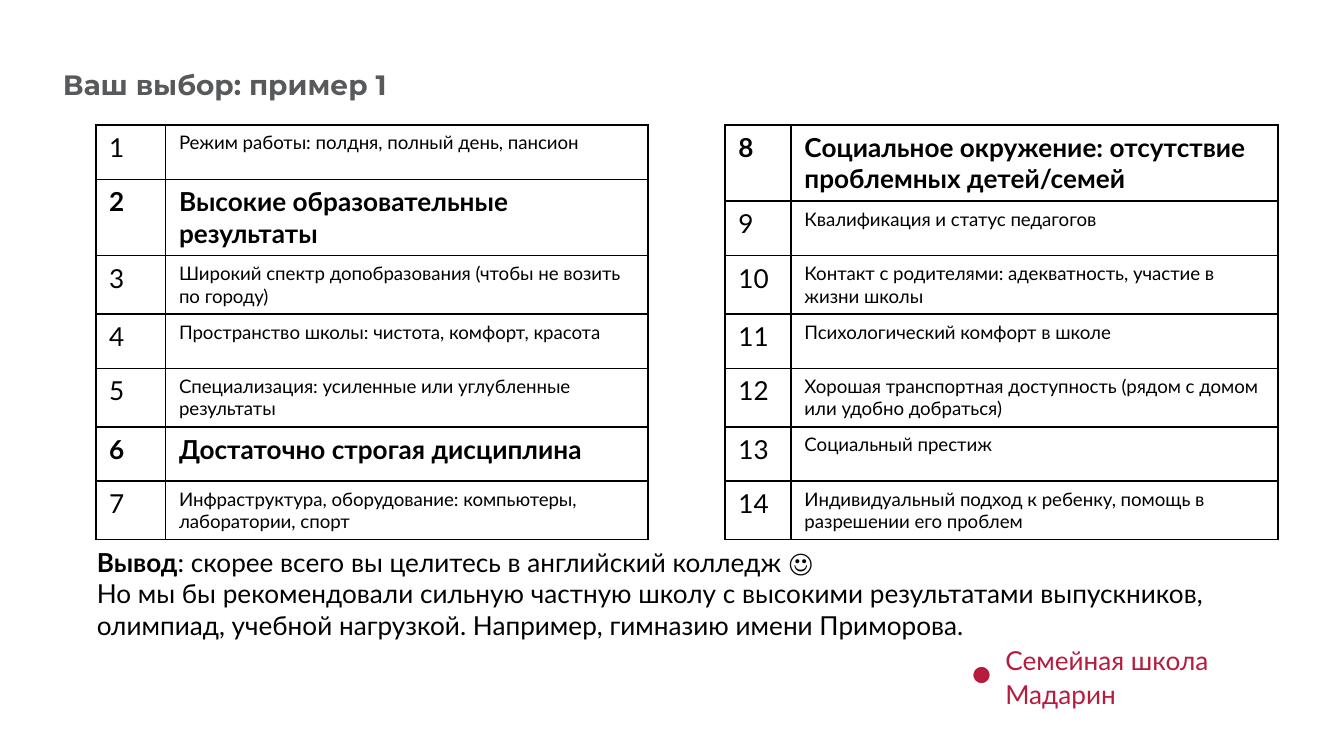
"""Build a slide ranking school choice criteria in two tables."""
from dataclasses import dataclass

from lxml import etree
from pptx import Presentation
from pptx import util as u
from pptx.dml import color
from pptx.enum import shapes, text
from pptx.oxml import ns


@dataclass(frozen=True)
class Theme:
    """Colours, fonts and type sizes of the slide."""

    title: dict
    body: dict
    strong: dict
    detail: dict
    footer: dict
    accent: str = "B61C3D"
    paper: str = "FFFFFF"
    ink: str = "000000"


BODY = {"name": "Lato", "size": u.Pt(14), "bold": False, "color": "000000"}
THEME = Theme(
    title={"name": "Montserrat", "size": u.Pt(15), "bold": True, "color": "58595B"},
    body=BODY,
    strong={**BODY, "bold": True},
    detail={**BODY, "size": u.Pt(10)},
    footer={**BODY, "color": "B61C3D"},
)
PRIORITIES = {2, 6, 8}
ROW_HEIGHT = u.Cm(1.03)
CRITERIA = [
    "Режим работы: полдня, полный день, пансион",
    "Высокие образовательные результаты",
    "Широкий спектр допобразования (чтобы не возить по городу)",
    "Пространство школы: чистота, комфорт, красота",
    "Специализация: усиленные или углубленные результаты",
    "Достаточно строгая дисциплина",
    "Инфраструктура, оборудование: компьютеры, лаборатории, спорт",
    "Социальное окружение: отсутствие проблемных детей/семей",
    "Квалификация и статус педагогов",
    "Контакт с родителями: адекватность, участие в жизни школы",
    "Психологический комфорт в школе",
    "Хорошая транспортная доступность (рядом с домом или удобно добраться)",
    "Социальный престиж",
    "Индивидуальный подход к ребенку, помощь в разрешении его проблем",
]


def add_span(para, wording, style):
    """Append a formatted run to a paragraph."""
    span = para.add_run()
    span.text = wording
    for key, value in style.items():
        if key == "color":
            span.font.color.rgb = color.RGBColor.from_string(value)
        else:
            setattr(span.font, key, value)


def add_title(page, wording):
    """Place and fill the title placeholder."""
    title = page.shapes.title
    place = {"left": 0.94, "top": 1.02, "width": 22.68, "height": 1.6}
    for key, value in place.items():
        setattr(title, key, u.Cm(value))
    frame = title.text_frame
    layout = {
        "auto_size": text.MSO_AUTO_SIZE.NONE,
        "vertical_anchor": text.MSO_ANCHOR.TOP,
        "margin_left": u.Cm(0.25),
        "margin_top": u.Cm(0.25),
    }
    for key, value in layout.items():
        setattr(frame, key, value)
    para = frame.paragraphs[0]
    para.alignment = text.PP_ALIGN.LEFT
    add_span(para, wording, THEME.title)


def add_text(page, place, paragraphs, line_spacing=1.0):
    """Add a wrapping text box from lists of (wording, style) spans."""
    box = page.shapes.add_textbox(*map(u.Cm, place))
    frame = box.text_frame
    frame.word_wrap = True
    for index, spans in enumerate(paragraphs):
        para = frame.add_paragraph() if index else frame.paragraphs[0]
        para.line_spacing = line_spacing
        for wording, style in spans:
            add_span(para, wording, style)


def add_borders(cell):
    """Draw a thin line on every side of a table cell."""
    properties = cell._tc.get_or_add_tcPr()
    for side in ("a:lnL", "a:lnR", "a:lnT", "a:lnB"):
        line = etree.SubElement(properties, ns.qn(side), w=str(u.Pt(1)))
        fill = etree.SubElement(line, ns.qn("a:solidFill"))
        etree.SubElement(fill, ns.qn("a:srgbClr"), val=THEME.ink)


def fill_cell(cell, wording, style):
    """Write, border and fill one table cell."""
    add_span(cell.text_frame.paragraphs[0], wording, style)
    add_borders(cell)
    cell.fill.solid()
    cell.fill.fore_color.rgb = color.RGBColor.from_string(THEME.paper)


def add_criteria(page, left, widths, first, criteria):
    """Add a numbered table of criteria, with the priorities in bold."""
    widths = [u.Cm(width) for width in widths]
    frame = page.shapes.add_table(
        len(criteria), 2, u.Cm(left), u.Cm(2.36), sum(widths), ROW_HEIGHT * len(criteria)
    )
    table = frame.table
    table.first_row = table.horz_banding = False
    for column, width in zip(table.columns, widths):
        column.width = width
    for row, criterion in enumerate(criteria):
        table.rows[row].height = ROW_HEIGHT
        number = first + row
        strong = number in PRIORITIES
        fill_cell(table.cell(row, 0), str(number), THEME.strong if strong else THEME.body)
        fill_cell(table.cell(row, 1), criterion, THEME.strong if strong else THEME.detail)


def add_dot(page, left, top, size):
    """Add the accent dot beside the footer."""
    dot = page.shapes.add_shape(shapes.MSO_SHAPE.OVAL, *map(u.Cm, (left, top, size, size)))
    dot.shadow.inherit = False
    dot.fill.solid()
    dot.fill.fore_color.rgb = color.RGBColor.from_string(THEME.accent)
    dot.line.color.rgb = color.RGBColor.from_string(THEME.paper)
    dot.line.width = u.Pt(2)


def main():
    """Build and save the deck."""
    deck = Presentation()
    deck.slide_width, deck.slide_height = u.Cm(25.4), u.Cm(14.29)
    page = deck.slides.add_slide(deck.slide_layouts[5])
    add_title(page, "Ваш выбор: пример 1")
    add_text(page, (18.75, 11.99, 6.2, 0.89), [[("Семейная школа Мадарин", THEME.footer)]], 1.1)
    add_dot(page, 18.36, 12.57, 0.38)
    add_criteria(page, 1.81, (1.32, 9.12), 1, CRITERIA[:7])
    add_criteria(page, 13.7, (1.25, 9.2), 8, CRITERIA[7:])
    conclusion = [
        [
            ("Вывод", THEME.strong),
            (": скорее всего вы целитесь в английский колледж ☺", THEME.body),
        ],
        [
            (
                "Но мы бы рекомендовали сильную частную школу с высокими результатами "
                "выпускников, олимпиад, учебной нагрузкой. Например, гимназию имени Приморова.",
                THEME.body,
            )
        ],
    ]
    add_text(page, (1.58, 10.2, 22.58, 2.06), conclusion)
    deck.save("out.pptx")


if __name__ == "__main__":
    main()
